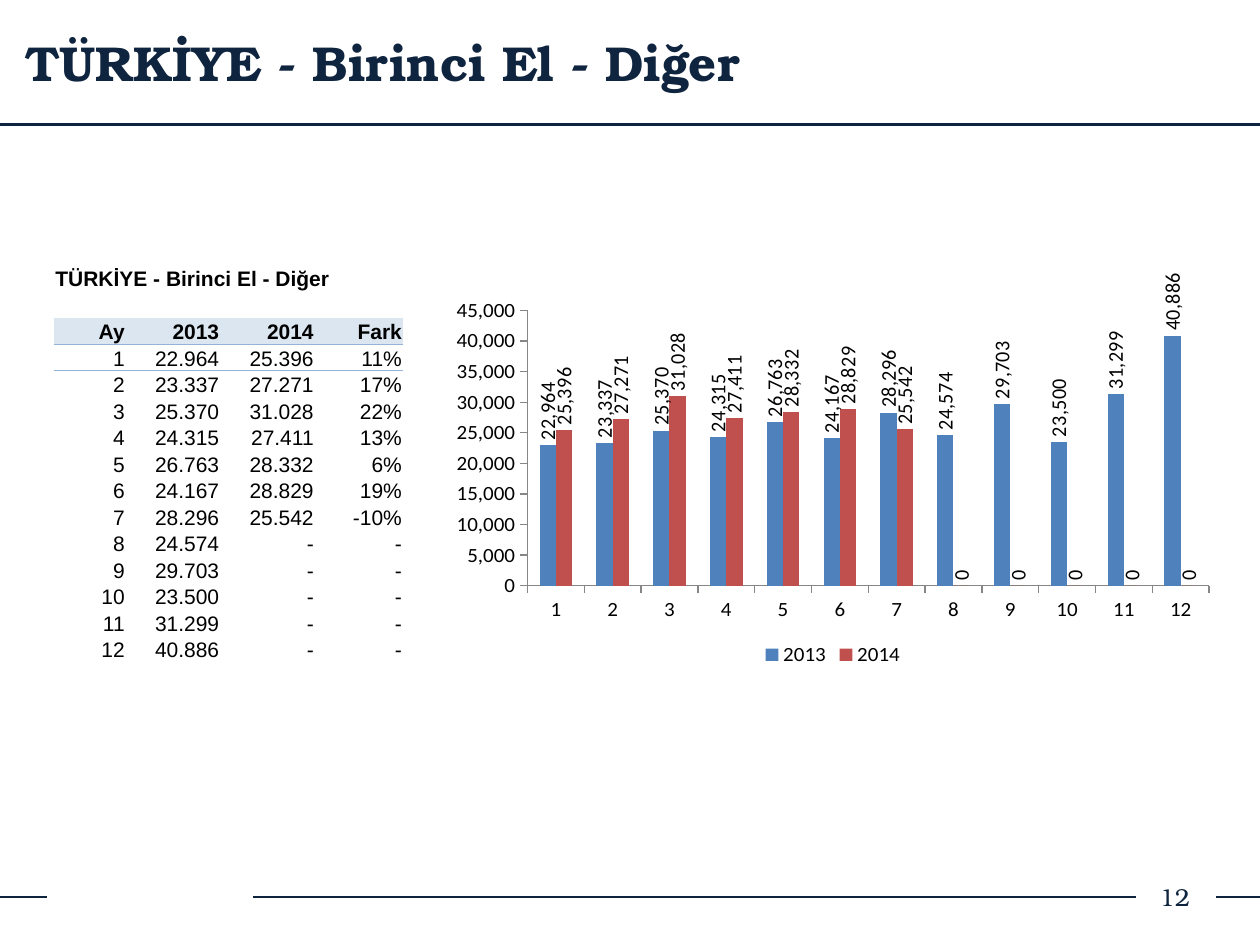
from lxml import etree
from pptx import Presentation
from pptx.chart.data import CategoryChartData
from pptx.dml.color import RGBColor
from pptx.enum.chart import XL_CHART_TYPE, XL_LABEL_POSITION, XL_LEGEND_POSITION, XL_TICK_MARK
from pptx.enum.shapes import MSO_CONNECTOR
from pptx.enum.text import MSO_ANCHOR, PP_ALIGN
from pptx.oxml import parse_xml
from pptx.oxml.ns import nsdecls, qn
from pptx.util import Inches, Pt

COLUMNS = XL_CHART_TYPE.COLUMN_CLUSTERED
OUTSIDE_END = XL_LABEL_POSITION.OUTSIDE_END
BOTTOM_LEGEND = XL_LEGEND_POSITION.BOTTOM
TICK_OUT = XL_TICK_MARK.OUTSIDE
STRAIGHT = MSO_CONNECTOR.STRAIGHT
MIDDLE, BOTTOM = MSO_ANCHOR.MIDDLE, MSO_ANCHOR.BOTTOM
LEFT, CENTER, RIGHT = PP_ALIGN.LEFT, PP_ALIGN.CENTER, PP_ALIGN.RIGHT

TITLE = "TÜRKİYE - Birinci El - Diğer"
PAGE_NUMBER = "12"
HEADINGS = ("Ay", "2013", "2014", "Fark")
SALES = {
    "2013": (22964, 23337, 25370, 24315, 26763, 24167, 28296, 24574, 29703, 23500, 31299, 40886),
    "2014": (25396, 27271, 31028, 27411, 28332, 28829, 25542, 0, 0, 0, 0, 0),
}
COLORS = {
    "navy": "0F243E", "black": "000000", "header": "DCE6F1", "rule": "95B3D7",
    "axis": "868686", "2013": "4F81BD", "2014": "C0504D",
}
DISPLAY_FONT, TABLE_FONT, CHART_FONT = "TeX Gyre Bonum", "Arial", "Calibri"
RULES = [(2.01, 9.02, 7.12, 1.5), (0, 0.37, 7.12, 1.5), (9.65, 10, 7.12, 1.5), (0, 10, 0.99, 2)]
COLUMN_WIDTHS = (0.57, 0.75, 0.75, 0.7)
ROW_HEIGHT = 0.21
HEADER_ROW = 2
NO_GRID_STYLE = "{2D5ABB26-0587-4C30-8999-92F81FD0307C}"


def color(name):
    return RGBColor.from_string(COLORS[name])


def set_font(font, face, size, tint, bold=False):
    font.name, font.size, font.bold = face, Pt(size), bold
    font.color.rgb = color(tint)


def add_rule(page, left, right, top, width):
    rule = page.shapes.add_connector(
        STRAIGHT, Inches(left), Inches(top), Inches(right), Inches(top))
    rule.line.color.rgb = color("navy")
    rule.line.width = Pt(width)
    etree.SubElement(rule._element.spPr, qn("a:effectLst"))


def add_text(page, text, place, size, bold, align, left_inset):
    box = page.shapes.add_textbox(*map(Inches, place))
    frame = box.text_frame
    frame.word_wrap = True
    frame.vertical_anchor = MIDDLE
    frame.margin_left = Inches(left_inset)
    para = frame.paragraphs[0]
    para.text = text
    para.alignment = align
    set_font(para.font, DISPLAY_FONT, size, "navy", bold)


def thousands(value):
    return f"{value:,}".replace(",", ".") if value else "-"


def change(before, after):
    return f"{after / before - 1:.0%}" if after else "-"


def add_border(cell, side):
    border = parse_xml(
        f'<a:{side} {nsdecls("a")} w="6350"><a:solidFill>'
        f'<a:srgbClr val="{COLORS["rule"]}"/></a:solidFill></a:{side}>')
    cell._tc.get_or_add_tcPr().insert(0, border)


def fill_cell(cell, text, bold, align):
    cell.vertical_anchor = BOTTOM
    cell.margin_left = cell.margin_right = cell.margin_top = Inches(0.01)
    cell.margin_bottom = 0
    para = cell.text_frame.paragraphs[0]
    if text:
        para.text = text
        para.alignment = align
        set_font(para.font, TABLE_FONT, 12, "black", bold)
    else:
        etree.SubElement(para._p, qn("a:endParaRPr"), sz="1200")
    cell.fill.background()


def add_sales_table(page):
    months = [
        (str(month), thousands(before), thousands(after), change(before, after))
        for month, (before, after) in enumerate(zip(*SALES.values()), 1)
    ]
    rows = [(TITLE, "", "", ""), ("",) * 4, HEADINGS, *months]
    frame = page.shapes.add_table(
        len(rows), len(HEADINGS), Inches(0.43), Inches(2.1),
        Inches(sum(COLUMN_WIDTHS)), Inches(ROW_HEIGHT * len(rows)))
    table = frame.table
    table.first_row = table.horz_banding = False
    table._tbl.tblPr.find(qn("a:tableStyleId")).text = NO_GRID_STYLE
    for column, width in zip(table.columns, COLUMN_WIDTHS):
        column.width = Inches(width)
    for row_index, row in enumerate(rows):
        table.rows[row_index].height = Inches(ROW_HEIGHT)
        for column_index, text in enumerate(row):
            cell = table.cell(row_index, column_index)
            fill_cell(cell, text, row_index <= HEADER_ROW, RIGHT if row_index else LEFT)
            if row_index == HEADER_ROW:
                cell.fill.solid()
                cell.fill.fore_color.rgb = color("header")
                add_border(cell, "lnB")
            elif row_index == HEADER_ROW + 1:
                add_border(cell, "lnT")
    table.cell(0, 0).merge(table.cell(0, len(HEADINGS) - 1))


def add_sales_chart(page):
    data = CategoryChartData(number_format="#,##0")
    data.categories = [str(month) for month in range(1, 13)]
    for year, values in SALES.items():
        data.add_series(year, values)
    chart = page.shapes.add_chart(
        COLUMNS, Inches(3.5), Inches(2.18), Inches(6.22), Inches(3.15), data).chart
    set_font(chart.font, CHART_FONT, 12, "black")
    chart.has_title = False
    chart.has_legend = True
    chart.legend.position = BOTTOM_LEGEND
    chart.legend.include_in_layout = False
    for axis in (chart.category_axis, chart.value_axis):
        axis.has_major_gridlines = False
        axis.major_tick_mark = TICK_OUT
        axis.format.line.color.rgb = color("axis")
    chart.value_axis.minimum_scale = 0
    chart.value_axis.maximum_scale = 45000
    chart.value_axis.major_unit = 5000
    chart.value_axis.tick_labels.number_format = "#,##0"
    chart.value_axis.tick_labels.number_format_is_linked = False
    plot = chart.plots[0]
    plot.vary_by_categories = False
    plot.gap_width = 150
    plot.overlap = 0
    for series in plot.series:
        series.format.fill.solid()
        series.format.fill.fore_color.rgb = color(series.name)
        labels = series.data_labels
        labels.show_value = True
        labels.position = OUTSIDE_END
        labels.number_format = "#,##0"
        labels.number_format_is_linked = False
        set_font(labels.font, CHART_FONT, 12, "black")
        body = labels._element.find(qn("c:txPr")).find(qn("a:bodyPr"))
        body.set("rot", "-5400000")
        body.set("vert", "horz")


def main():
    deck = Presentation()
    deck.slide_width, deck.slide_height = Inches(10), Inches(7.5)
    page = deck.slides.add_slide(deck.slide_layouts[6])
    for rule in RULES:
        add_rule(page, *rule)
    add_text(page, TITLE, (0, 0, 10, 0.99), 28, True, LEFT, 0.2)
    add_text(page, PAGE_NUMBER, (9.09, 6.92, 0.47, 0.4), 14, False, CENTER, 0.1)
    add_sales_table(page)
    add_sales_chart(page)
    deck.save("out.pptx")


if __name__ == "__main__":
    main()
